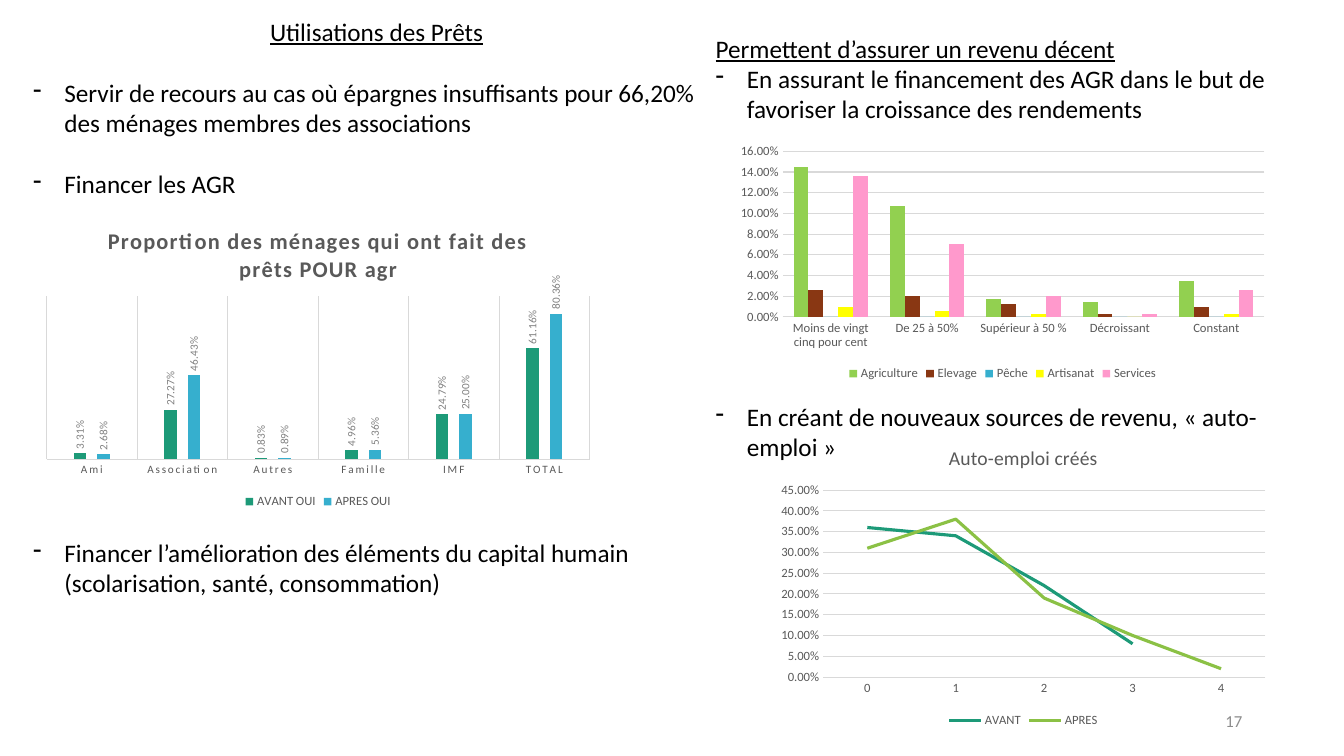
from dataclasses import dataclass

from lxml import etree
from pptx import Presentation, util as u
from pptx.chart.data import CategoryChartData
from pptx.dml.color import RGBColor
from pptx.enum import chart as ch, text
from pptx.oxml import parse_xml
from pptx.oxml.ns import nsdecls, qn


@dataclass(frozen=True)
class Theme:
    font: str = "Calibri"
    ink: str = "000000"
    grey: str = "595959"
    label: str = "808080"
    page: str = "8C8C8C"
    rule: str = "D9D9D9"
    teal: str = "1D9A78"
    blue: str = "36AFCE"
    green: str = "8BC145"
    lime: str = "92D050"
    brown: str = "893713"
    yellow: str = "FFFF00"
    pink: str = "FF99CC"
    body: int = 18
    head: int = 16
    sub: int = 14
    num: int = 12
    base: int = 10
    note: int = 9
    tiny: int = 8
    line: int = 22  # height of one body line, in points


T = Theme()
WIDE, HIGH = u.Inches(13.33), u.Inches(7.5)
PAGE = (0, 0, WIDE, HIGH)
BARS = ch.XL_CHART_TYPE.COLUMN_CLUSTERED
LINES = ch.XL_CHART_TYPE.LINE


def part(box, x, y, w, h):
    """Return the area inside box given in percent of its size."""
    left, top, wide, high = box
    return (int(left + wide * x / 100), int(top + high * y / 100),
            int(wide * w / 100), int(high * h / 100))


def style(font, size, color, **more):
    font.name, font.size = T.font, u.Pt(size)
    font.color.rgb = RGBColor.from_string(color)
    for key, value in more.items():
        setattr(font, key, value)


def rule(line):
    line.color.rgb = RGBColor.from_string(T.rule)
    line.width = u.Pt(0.75)


def prose(slide, box, title, align, items):
    """Write an underlined title and dashed items, each after some free lines."""
    frame = slide.shapes.add_textbox(*box).text_frame
    frame.word_wrap = True
    para = frame.paragraphs[0]
    para.text, para.alignment = title, align
    style(para.runs[0].font, T.body, T.ink, underline=True)
    for gap, words in items:
        para = frame.add_paragraph()
        para.text = words
        para.space_before = u.Pt(gap * T.line)
        style(para.runs[0].font, T.body, T.ink)
        props = para._p.get_or_add_pPr()
        dent = u.Inches(0.31)
        props.set("marL", str(dent))
        props.set("indent", str(-dent))
        etree.SubElement(props, qn("a:buChar")).set("char", "-")


def plot(slide, box, kind, cats, rows, top, step):
    """Add a chart; rows hold name, colour and values of each series."""
    data = CategoryChartData(number_format="0.00%")
    data.categories = cats
    for name, _, vals in rows:
        data.add_series(name, vals)
    chart = slide.shapes.add_chart(kind, *box, data).chart
    style(chart.font, T.base, T.ink)
    chart._chartSpace.find(qn("c:chart")).addnext(parse_xml(
        f'<c:spPr {nsdecls("c", "a")}><a:noFill/><a:ln><a:noFill/></a:ln></c:spPr>'))
    chart.has_title = False
    chart.has_legend = True
    chart.legend.position = ch.XL_LEGEND_POSITION.BOTTOM
    chart.legend.include_in_layout = False
    style(chart.legend.font, T.note, T.grey)

    for axis in (chart.category_axis, chart.value_axis):
        axis.major_tick_mark = axis.minor_tick_mark = ch.XL_TICK_MARK.NONE
        style(axis.tick_labels.font, T.note, T.grey)
    rule(chart.category_axis.format.line)
    scale = chart.value_axis
    scale.minimum_scale, scale.maximum_scale, scale.major_unit = 0, top, step
    scale.tick_labels.number_format = "0.00%"
    scale.tick_labels.number_format_is_linked = False
    scale.format.line.fill.background()
    rule(scale.major_gridlines.format.line)

    for item, (_, color, _) in zip(chart.plots[0].series, rows):
        shade = RGBColor.from_string(color)
        if kind == LINES:
            item.smooth = False
            item.marker.style = ch.XL_MARKER_STYLE.NONE
            item.format.line.color.rgb = shade
            item.format.line.width = u.Pt(2.25)
        else:
            item.format.fill.solid()
            item.format.fill.fore_color.rgb = shade
    chart.plots[0].vary_by_categories = False
    return chart


def head(chart, words, size, bold):
    chart.has_title = True
    para = chart.chart_title.text_frame.paragraphs[0]
    para.text = words
    style(para.runs[0].font, size, T.grey, bold=bold)
    chart.chart_title.include_in_layout = False
    return para.runs[0]


def loans(slide, box):
    prose(slide, box, "Utilisations des Prêts", text.PP_ALIGN.CENTER, [
        (1, "Servir de recours au cas où épargnes insuffisants pour 66,20% des "
            "ménages membres des associations"),
        (1, "Financer les AGR"),
        (11, "Financer l’amélioration des éléments du capital humain "
             "(scolarisation, santé, consommation)")])
    chart = plot(slide, part(box, 1.71, 32.14, 80.03, 48.7), BARS,
                 ["Ami", "Association", "Autres", "Famille", "IMF", "TOTAL"],
                 [("AVANT OUI", T.teal,
                   (0.0331, 0.2727, 0.0083, 0.0496, 0.2479, 0.6116)),
                  ("APRES OUI", T.blue,
                   (0.0268, 0.4643, 0.0089, 0.0536, 0.25, 0.8036))], 0.9, 0.1)
    run = head(chart, "Proportion des ménages qui ont fait des prêts POUR agr",
               T.head, True)
    run._r.get_or_add_rPr().set("spc", "100")
    chart.value_axis.has_major_gridlines = False
    chart.value_axis.visible = False
    axis = chart.category_axis
    axis.has_major_gridlines = True
    rule(axis.major_gridlines.format.line)
    style(axis.tick_labels.font, T.tiny, T.grey)
    axis._element.xpath("c:txPr//a:defRPr")[0].set("spc", "120")
    bars = chart.plots[0]
    bars.gap_width, bars.overlap = 444, -90
    for item in bars.series:
        tags = item.data_labels
        tags.show_value = True
        tags.number_format, tags.number_format_is_linked = "0.00%", False
        tags.position = ch.XL_LABEL_POSITION.OUTSIDE_END
        style(tags.font, T.tiny, T.label)
        turn = tags._element.xpath("c:txPr/a:bodyPr")[0]
        turn.set("rot", "-5400000")
        turn.set("vert", "horz")


def income(slide, box):
    prose(slide, box, "Permettent d’assurer un revenu décent", text.PP_ALIGN.LEFT, [
        (0, "En assurant le financement des AGR dans le but de favoriser la "
            "croissance des rendements"),
        (9, "En créant de nouveaux sources de revenu, « auto-emploi »")])
    chart = plot(slide, part(box, 4.03, 15.76, 90.92, 34.96), BARS,
                 ["Moins de vingt cinq pour cent", "De 25 à 50%",
                  "Supérieur à 50 %", "Décroissant", "Constant"],
                 [("Agriculture", T.lime, (0.145, 0.107, 0.017, 0.014, 0.035)),
                  ("Elevage", T.brown, (0.026, 0.02, 0.012, 0.003, 0.009)),
                  ("Pêche", T.blue, (0, 0, 0, 0, 0)),
                  ("Artisanat", T.yellow, (0.009, 0.006, 0.003, 0, 0.003)),
                  ("Services", T.pink, (0.136, 0.07, 0.02, 0.003, 0.026))],
                 0.16, 0.02)
    chart.plots[0].gap_width, chart.plots[0].overlap = 150, 0
    jobs = plot(slide, part(box, 10.92, 57.02, 84.03, 42.98), LINES,
                ["0", "1", "2", "3", "4"],
                [("AVANT", T.teal, (0.36, 0.34, 0.22, 0.08, None)),
                 ("APRES", T.green, (0.31, 0.38, 0.19, 0.1, 0.02))], 0.45, 0.05)
    head(jobs, "Auto-emploi créés", T.sub, False)


def folio(slide, box):
    """Write the page number."""
    frame = slide.shapes.add_textbox(*box).text_frame
    frame.word_wrap = True
    frame.vertical_anchor = text.MSO_ANCHOR.MIDDLE
    para = frame.paragraphs[0]
    para.text, para.alignment = "17", text.PP_ALIGN.RIGHT
    style(para.runs[0].font, T.num, T.page)


def main():
    deck = Presentation()
    deck.slide_width, deck.slide_height = WIDE, HIGH
    slide = deck.slides.add_slide(deck.slide_layouts[6])
    income(slide, part(PAGE, 52.51, 3.73, 44.64, 93.07))
    folio(slide, part(PAGE, 70.67, 92.67, 22.5, 5.33))
    loans(slide, part(PAGE, 1.73, 1.47, 52.59, 82.13))
    deck.save("out.pptx")


if __name__ == "__main__":
    main()
